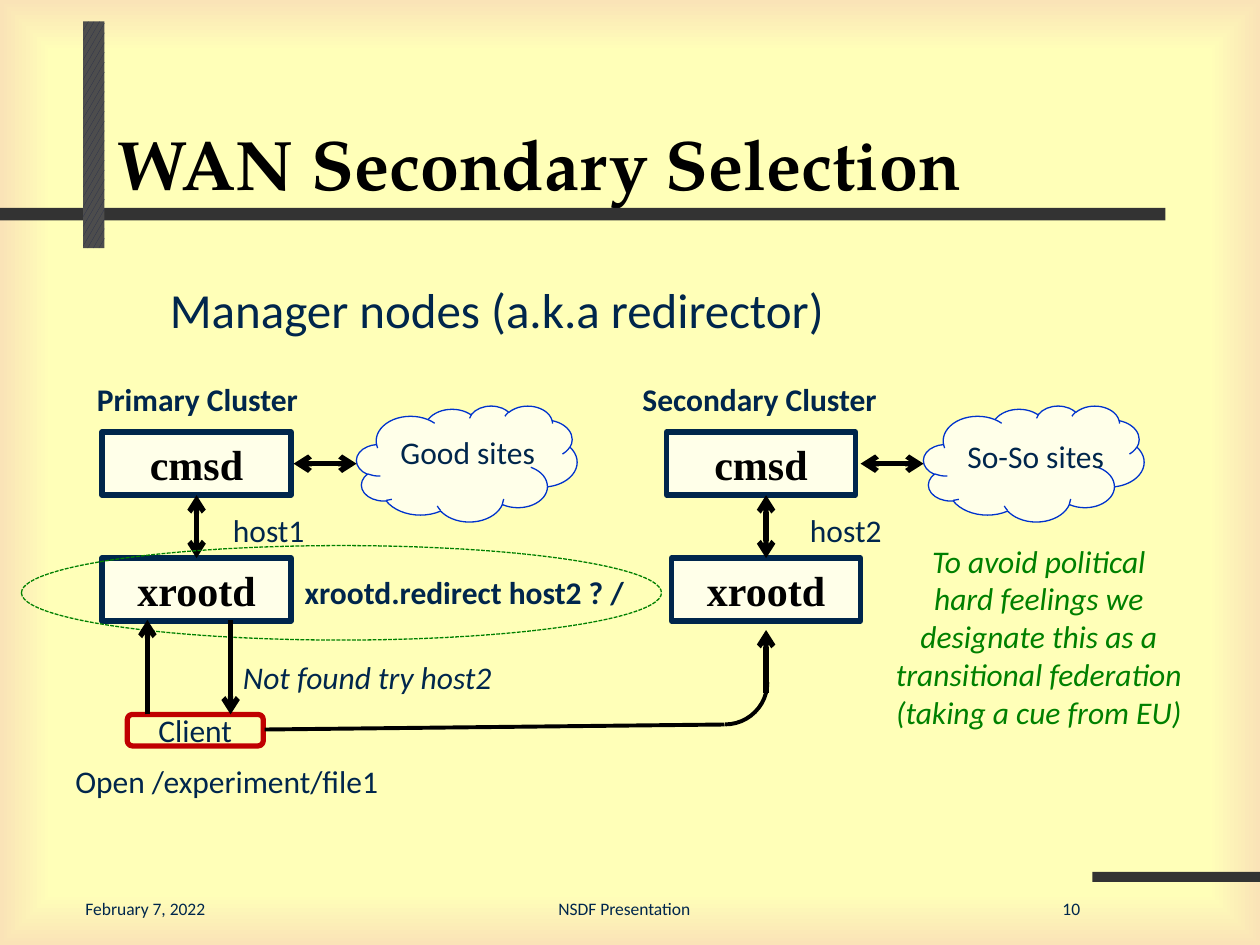
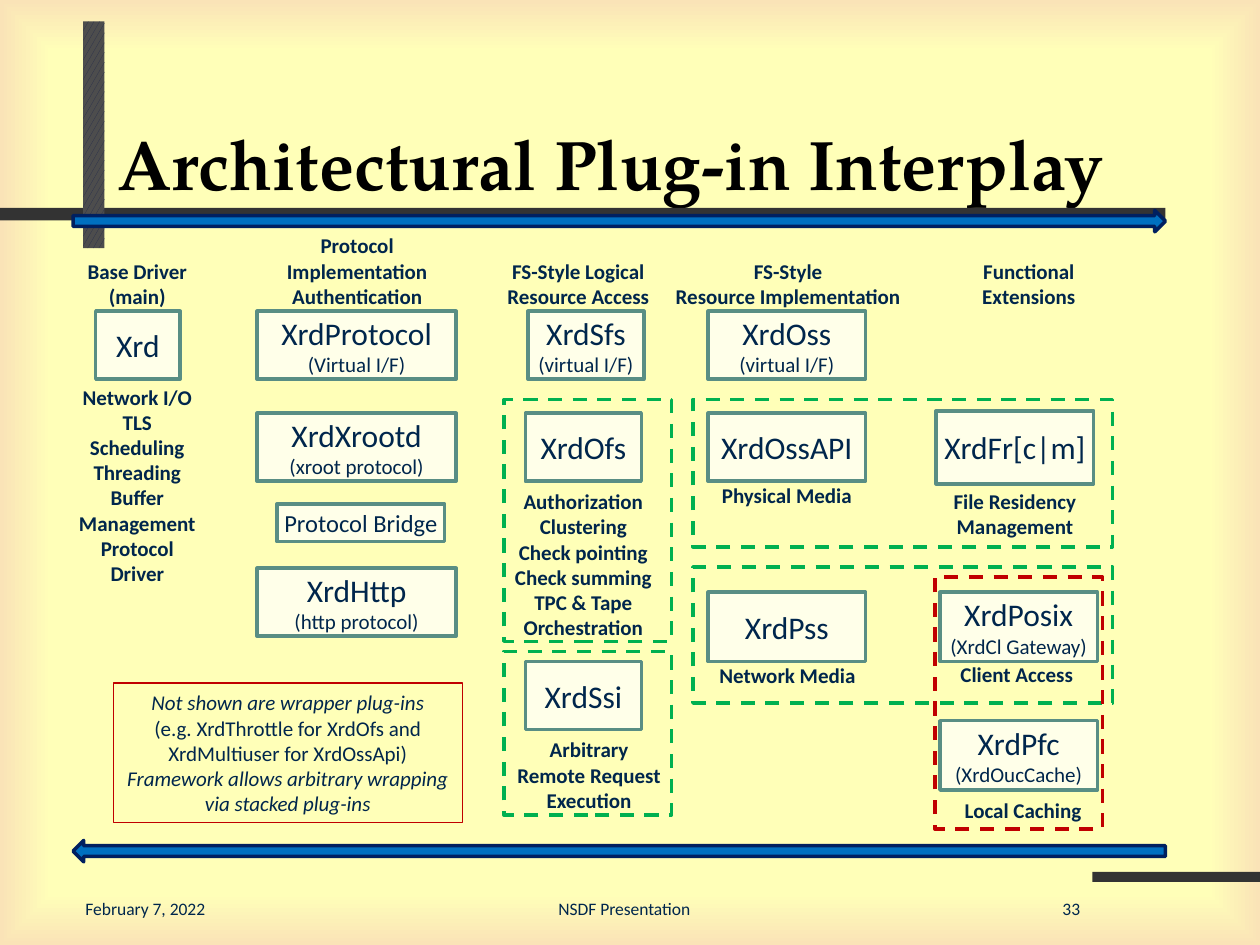
from dataclasses import dataclass

from pptx import Presentation
from pptx.dml.color import RGBColor
from pptx.enum.dml import MSO_LINE, MSO_PATTERN
from pptx.enum.shapes import MSO_CONNECTOR, MSO_SHAPE
from pptx.enum.text import MSO_ANCHOR, MSO_AUTO_SIZE, PP_ALIGN
from pptx.oxml import parse_xml
from pptx.oxml.ns import nsdecls, qn
from pptx.util import Inches, Pt

RECT, ROUND, OVAL = MSO_SHAPE.RECTANGLE, MSO_SHAPE.ROUNDED_RECTANGLE, MSO_SHAPE.OVAL
CLOUD, ARC = MSO_SHAPE.CLOUD, MSO_SHAPE.ARC
RIGHT_ARROW, LEFT_ARROW = MSO_SHAPE.RIGHT_ARROW, MSO_SHAPE.LEFT_ARROW
LEFT, CENTER, RIGHT = PP_ALIGN.LEFT, PP_ALIGN.CENTER, PP_ALIGN.RIGHT
MIDDLE, BOTTOM = MSO_ANCHOR.MIDDLE, MSO_ANCHOR.BOTTOM
DASH, SHORT_DASH = MSO_LINE.DASH, MSO_LINE.SQUARE_DOT
FIT, NO_FIT = MSO_AUTO_SIZE.SHAPE_TO_FIT_TEXT, MSO_AUTO_SIZE.NONE
STRAIGHT = MSO_CONNECTOR.STRAIGHT
LINE_HEIGHT = 1.22


@dataclass(frozen=True)
class Theme:
    body: str = "Calibri"
    heading: str = "TeX Gyre Pagella"
    serif: str = "Times New Roman"
    navy: str = "00264C"
    black: str = "000000"
    cream: str = "FFFFE9"
    paper: str = "FFFFB8"
    paper_edge: str = "FAE3B7"
    band: str = "333333"
    pole: str = "4D4D4D"
    pole_mark: str = "262D4C"
    cloud: str = "0033CC"
    red: str = "C00000"
    green: str = "008000"
    group_green: str = "00B050"
    teal: str = "598E84"
    arrow: str = "0070C0"
    arrow_edge: str = "002060"
    title_size: int = 40
    lead_size: int = 28
    node_size: int = 24
    text_size: int = 18
    bridge_size: int = 14
    small_size: int = 12
    footer_size: int = 10


T = Theme()


def rgb(value):
    return RGBColor.from_string(value)


def apply(obj, values):
    for name, value in values.items():
        setattr(obj, name, value)


class Deck:
    def __init__(self, theme):
        self.t = theme
        self.prs = Presentation()
        apply(self.prs, {"slide_width": Inches(10), "slide_height": Inches(7.5)})
        self.s = None
        self.background()

    def background(self):
        master = self.prs.slide_master
        master.background.fill.solid()
        bg = master.element.find(".//" + qn("p:bgPr"))
        stops = [(0, self.t.paper), (89, self.t.paper), (100, self.t.paper_edge)]
        gs = "".join(
            f'<a:gs pos="{pos * 1000}"><a:srgbClr val="{color}"/></a:gs>'
            for pos, color in stops
        )
        bg.replace(bg[0], parse_xml(
            f'<a:gradFill {nsdecls("a")} rotWithShape="1"><a:gsLst>{gs}</a:gsLst>'
            '<a:path path="shape"><a:fillToRect l="50000" t="50000" r="50000" b="50000"/>'
            '</a:path></a:gradFill>'
        ))

    def slide(self, title, number):
        t = self.t
        self.s = self.prs.slides.add_slide(self.prs.slide_layouts[5])
        for at in [(0, 1.65, 9.25, 0.1), (8.67, 6.92, 1.33, 0.08)]:
            self.shape(at, fill=t.band)
        pole = self.shape((0.66, 0.17, 0.17, 1.8))
        pole.fill.patterned()
        pole.fill.pattern = MSO_PATTERN.LARGE_CONFETTI
        pole.fill.fore_color.rgb = rgb(t.pole_mark)
        pole.fill.back_color.rgb = rgb(t.pole)
        footers = [
            (0.58, 1.92, "February 7, 2022", LEFT),
            (3.33, 3.25, "NSDF Presentation", CENTER),
            (7.75, 0.92, str(number), RIGHT),
        ]
        for x, w, text, align in footers:
            self.label((x, 7.08, w), text, align=align, wrap=True, size=t.footer_size)
        sp = self.s.shapes.title
        apply(sp, dict(zip(("left", "top", "width", "height"),
                           map(Inches, (0.83, 0.42, 8.36, 1.25)))))
        apply(sp.text_frame, {"auto_size": NO_FIT, "vertical_anchor": BOTTOM})
        self.text(sp.text_frame, [title], LEFT, name=t.heading,
                  size=t.title_size, color=t.black, bold=True)

    def text(self, tf, lines, align, **style):
        base = {"name": self.t.body, "size": self.t.text_size,
                "color": self.t.navy, "bold": False, "italic": False, **style}
        for i, line in enumerate(lines):
            words, extra = line if isinstance(line, tuple) else (line, {})
            fmt = {**base, **extra}
            color, size = fmt.pop("color"), fmt.pop("size")
            p = tf.add_paragraph() if i else tf.paragraphs[0]
            p.alignment = align
            r = p.add_run()
            r.text = words
            apply(r.font, {**fmt, "size": Pt(size)})
            r.font.color.rgb = rgb(color)

    def label(self, at, *lines, align=LEFT, wrap=False, **style):
        size = style.get("size", self.t.text_size)
        height = len(lines) * size * LINE_HEIGHT / 72 + 0.1
        sp = self.s.shapes.add_textbox(*map(Inches, (*at, height)))
        apply(sp.text_frame, {"word_wrap": wrap, "auto_size": FIT})
        self.text(sp.text_frame, lines, align, **style)

    def caption(self, at, *lines):
        self.label(at, *lines, align=CENTER, size=self.t.small_size, bold=True)

    def shape(self, at, *lines, kind=RECT, fill=None, line=None, width=2, dash=None, **style):
        sp = self.s.shapes.add_shape(kind, *map(Inches, at))
        sp.shadow.inherit = False
        if fill:
            sp.fill.solid()
            sp.fill.fore_color.rgb = rgb(fill)
        else:
            sp.fill.background()
        if line:
            sp.line.color.rgb = rgb(line)
            apply(sp.line, {"width": Pt(width), "dash_style": dash})
        else:
            sp.line.fill.background()
        if lines:
            tf = sp.text_frame
            apply(tf, {"word_wrap": False, "vertical_anchor": MIDDLE, "margin_left": 0,
                       "margin_right": 0, "margin_top": 0, "margin_bottom": 0})
            self.text(tf, lines, CENTER, **style)
        return sp

    def node(self, x, y, name):
        self.shape((x, y, 1.5, 0.5), name, fill=self.t.cream, line=self.t.navy, width=3,
                   name=self.t.serif, size=self.t.node_size, color=self.t.black, bold=True)

    def plugin(self, at, name, note=None, size=T.text_size):
        notes = [(note, {"size": self.t.small_size})] if note else []
        self.shape(at, name, *notes, fill=self.t.cream, line=self.t.teal, size=size)

    def line(self, start, end, width=3, ends=("tailEnd",)):
        c = self.s.shapes.add_connector(STRAIGHT, *map(Inches, (*start, *end)))
        c.line.color.rgb = rgb(self.t.black)
        c.line.width = Pt(width)
        pr = c.element.spPr
        for end_tag in ends:
            pr.find(qn("a:ln")).append(
                parse_xml(f'<a:{end_tag} {nsdecls("a")} type="arrow"/>'))
        pr.append(parse_xml(f'<a:effectLst {nsdecls("a")}/>'))


def selection_slide(d):
    t = d.t
    both = ("headEnd", "tailEnd")
    d.slide("WAN Secondary Selection", 10)
    d.label((1.25, 2.17, 5.45), "Manager nodes (a.k.a redirector)", size=t.lead_size)

    clusters = [
        (0.81, 0.81, 2.83, 1.56, (0.67, 2.97, 1.81), "Primary Cluster",
         (3.08, 3.39, 1.28), "Good sites", (1.75, 4.01, 0.78), "host1"),
        (5.29, 5.33, 7.33, 6.08, (5, 2.97, 2.08), "Secondary Cluster",
         (7.58, 3.42, 1.3), "So-So sites", (6.33, 4.01, 0.78), "host2"),
    ]
    for cmsd_x, xrootd_x, cloud_x, link_x, name_at, name, sites_at, sites, host_at, host in clusters:
        d.node(xrootd_x, 4.43, "xrootd")
        d.node(cmsd_x, 3.43, "cmsd")
        d.label(name_at, name, bold=True)
        d.shape((cloud_x, 3.22, 1.75, 0.92), kind=CLOUD, fill=t.cream, line=t.cloud, width=0.75)
        d.label(sites_at, sites)
        d.label(host_at, host)
        d.line((link_x, 4.43), (link_x, 3.93), ends=both)
        d.line((cloud_x - 0.5, 3.68), (cloud_x, 3.68), ends=both)

    d.shape((1.01, 5.67, 1.08, 0.25), "Client", kind=ROUND, line=t.red, width=3)
    d.label((2.32, 4.5, 2.82), "xrootd.redirect host2 ? /", bold=True)
    d.shape((0.17, 4.33, 5.08, 0.75), kind=OVAL, line=t.green, width=0.75, dash=SHORT_DASH)
    d.line((1.17, 5.67), (1.17, 4.92))
    d.line((1.83, 4.92), (1.83, 5.67))
    d.line((2.1, 5.79), (5.75, 5.75), width=2.25, ends=())
    d.shape((5.42, 5.08, 0.67, 0.67), kind=ARC, line=t.black, width=2.25).rotation = 90
    d.line((6.08, 5.5), (6.08, 5))
    d.label((1.83, 5.17, 2.22), "Not found try host2", italic=True)
    d.label((0.5, 6, 2.64), "Open /experiment/file1")
    d.label((7, 4.25, 2.49), "To avoid political", "hard feelings we", "designate this as a",
            "transitional federation", "(taking a cue from EU)",
            align=CENTER, color=t.green, italic=True)


def plugin_slide(d):
    t = d.t
    d.slide("Architectural Plug-in Interplay", 33)

    plugins = [
        ((0.76, 2.47, 0.67, 0.54), "Xrd", None),
        ((2.04, 2.47, 1.58, 0.54), "XrdProtocol", "(Virtual I/F)"),
        ((2.04, 3.28, 1.58, 0.54), "XrdXrootd", "(xroot protocol)"),
        ((2.04, 4.51, 1.58, 0.54), "XrdHttp", "(http protocol)"),
        ((4.19, 2.47, 0.92, 0.54), "XrdSfs", "(virtual I/F)"),
        ((4.17, 3.28, 0.92, 0.54), "XrdOfs", None),
        ((4.17, 5.25, 0.92, 0.54), "XrdSsi", None),
        ((5.62, 2.47, 1.25, 0.54), "XrdOss", "(virtual I/F)"),
        ((5.62, 3.28, 1.25, 0.54), "XrdOssAPI", None),
        ((5.62, 4.7, 1.25, 0.55), "XrdPss", None),
        ((7.43, 3.26, 1.25, 0.58), "XrdFr[c|m]", None),
        ((7.46, 4.7, 1.25, 0.55), "XrdPosix", "(XrdCl Gateway)"),
        ((7.46, 5.72, 1.25, 0.55), "XrdPfc", "(XrdOucCache)"),
    ]
    for at, name, note in plugins:
        d.plugin(at, name, note)
    d.plugin((2.2, 4, 1.33, 0.3), "Protocol Bridge", size=t.bridge_size)

    captions = [
        ((0.59, 2, 1), "Base Driver", "(main)"),
        ((2.17, 1.8, 1.33), "Protocol", "Implementation", "Authentication"),
        ((3.92, 2, 1.34), "FS-Style Logical", "Resource Access"),
        ((5.25, 2, 2.01), "FS-Style", "Resource Implementation"),
        ((7.69, 2, 0.95), "Functional", "Extensions"),
        ((0.52, 3, 1.14), "Network I/O", "TLS", "Scheduling", "Threading", "Buffer",
         "Management", "Protocol", "Driver"),
        ((3.98, 3.83, 1.3), "Authorization", "Clustering", "Check pointing",
         "Check summing", "TPC & Tape", "Orchestration"),
        ((4, 5.8, 1.35), "Arbitrary", "Remote Request", "Execution"),
        ((5.62, 3.78, 1.25), "Physical Media"),
        ((5.6, 5.21, 1.3), "Network Media"),
        ((7.46, 3.83, 1.19), "File Residency", "Management"),
        ((7.52, 5.2, 1.1), "Client Access"),
        ((7.55, 6.28, 1.14), "Local Caching"),
    ]
    for caption in captions:
        d.caption(*caption)

    groups = [
        ((4, 3.17, 1.33, 1.92), t.group_green),
        ((4, 5.17, 1.33, 1.3), t.group_green),
        ((5.5, 3.17, 3.33, 1.17), t.group_green),
        ((5.5, 4.5, 3.33, 1.08), t.group_green),
        ((7.42, 4.58, 1.33, 2), t.red),
    ]
    for at, color in groups:
        d.shape(at, line=color, dash=DASH)

    for y, kind in [(1.67, RIGHT_ARROW), (6.67, LEFT_ARROW)]:
        d.shape((0.58, y, 8.67, 0.17), kind=kind, fill=t.arrow, line=t.arrow_edge)

    slanted = {"italic": True}
    d.shape((0.9, 5.42, 2.77, 1.11),
            ("Not shown are wrapper plug-ins", slanted),
            "(e.g. XrdThrottle for XrdOfs and",
            "XrdMultiuser for XrdOssApi)",
            ("Framework allows arbitrary wrapping", slanted),
            ("via stacked plug-ins", slanted),
            line=t.red, width=0.75, size=t.small_size)


def main():
    d = Deck(T)
    selection_slide(d)
    plugin_slide(d)
    d.prs.save("out.pptx")


if __name__ == "__main__":
    main()
